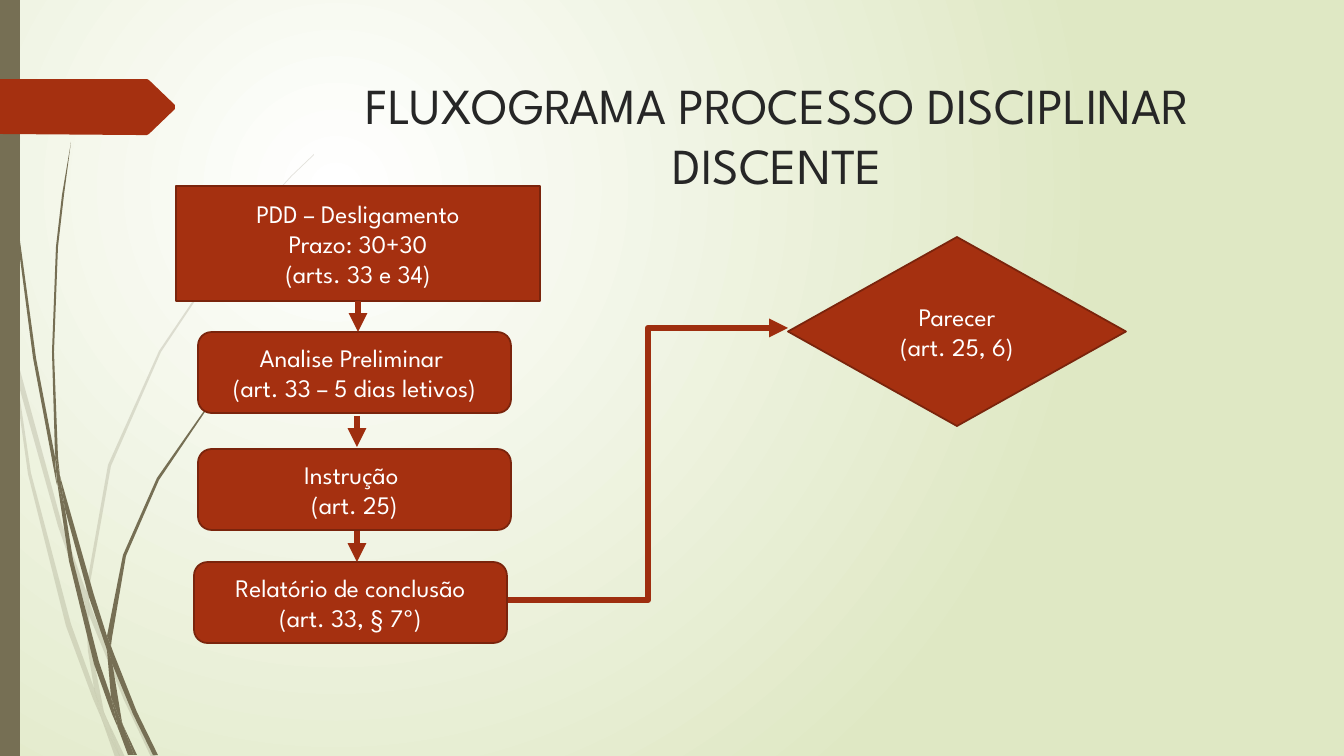
from lxml import etree
from pptx import Presentation
from pptx.dml.color import RGBColor
from pptx.enum.shapes import MSO_CONNECTOR, MSO_SHAPE
from pptx.enum.text import MSO_ANCHOR, MSO_AUTO_SIZE, PP_ALIGN
from pptx.oxml import parse_xml
from pptx.oxml.ns import nsdecls, qn
from pptx.util import Pt

PX = 12192000 / 1344
SLIDE_W, SLIDE_H = 1344, 756
FONT = "League Spartan"
WHITE = RGBColor(0xFF, 0xFF, 0xFF)
PALE_GREEN = RGBColor(0xDF, 0xE8, 0xC4)
OLIVE = RGBColor(0x76, 0x6F, 0x54)
RUST = RGBColor(0xA5, 0x30, 0x10)
RUST_EDGE = RGBColor(0x7A, 0x24, 0x0C)
RUST_ARROW = RGBColor(0x9E, 0x2E, 0x0F)
INK = RGBColor(0x26, 0x26, 0x26)

CENTER = PP_ALIGN.CENTER
TOP, MIDDLE = MSO_ANCHOR.TOP, MSO_ANCHOR.MIDDLE
RECTANGLE = MSO_SHAPE.RECTANGLE
PROCESS = MSO_SHAPE.FLOWCHART_PROCESS
STEP = MSO_SHAPE.FLOWCHART_ALTERNATE_PROCESS
DECISION = MSO_SHAPE.FLOWCHART_DECISION
STRAIGHT, ELBOW = MSO_CONNECTOR.STRAIGHT, MSO_CONNECTOR.ELBOW

# Outlines of the grass blades, as corner points in px.
PALE_GRASS = [
    [(11, 353), (9, 325), (0, 284), (0, 301), (10, 347)],
    [(58, 526), (85, 604), (86, 591), (62, 524), (14, 348), (17, 379)],
    [(93, 612), (89, 601), (89, 615), (124, 700), (151, 757), (156, 757), (128, 698)],
    [(120, 757), (125, 757), (106, 717)],
    [(94, 688), (71, 624), (31, 473), (17, 379), (11, 353), (28, 474), (66, 626),
     (93, 699), (102, 720), (100, 713)],
    [(85, 604), (88, 651), (94, 688), (97, 698), (106, 717), (104, 712), (92, 651),
     (89, 615), (89, 613)],
    [(89, 589), (111, 466), (161, 352), (231, 247), (270, 200), (292, 176),
     (314, 155), (314, 154), (291, 176), (270, 199), (230, 246), (159, 351),
     (108, 465), (86, 589), (86, 591), (89, 601)],
    [(102, 720), (115, 757), (120, 757)],
    [(89, 613), (89, 615), (89, 601), (86, 591), (85, 604)],
    [(97, 698), (94, 688), (100, 713), (102, 720), (120, 757), (106, 717)],
]
DARK_GRASS = [
    [(7, 111), (17, 235), (33, 358), (56, 481), (57, 485), (55, 461), (55, 457),
     (36, 358), (19, 234), (8, 110), (5, 48), (4, 0), (3, 0), (4, 48)],
    [(89, 597), (107, 650), (107, 638), (107, 636), (94, 595), (60, 476), (65, 509)],
    [(114, 654), (111, 646), (111, 661), (133, 714), (153, 755), (158, 755), (137, 712)],
    [(111, 697), (99, 662), (73, 560), (65, 509), (57, 481), (69, 561), (94, 664),
     (112, 714), (118, 728), (117, 723)],
    [(60, 476), (58, 457), (54, 352), (58, 247), (64, 195), (71, 142), (62, 195),
     (56, 247), (52, 352), (55, 453)],
    [(134, 755), (137, 755), (123, 725)],
    [(57, 481), (65, 509), (60, 476), (55, 453), (55, 457)],
    [(112, 638), (126, 556), (159, 480), (207, 409), (233, 377), (247, 362),
     (263, 347), (262, 347), (247, 361), (233, 376), (206, 408), (157, 478),
     (123, 555), (107, 636), (111, 646)],
    [(118, 728), (128, 755), (132, 755)],
    [(107, 650), (111, 697), (117, 712), (123, 725), (122, 722), (112, 661), (110, 656)],
    [(107, 650), (110, 656), (112, 661), (111, 646), (107, 636), (107, 638)],
    [(117, 712), (111, 697), (117, 723), (118, 728), (131, 755), (134, 755), (123, 725)],
]
PAGE_TAG = [(175, 109), (149, 134), (147, 135), (137, 135), (0, 134), (0, 79),
            (147, 79), (149, 80), (175, 105)]


def emu(*lengths):
    return [round(length * PX) for length in lengths]


def paint_background(slide):
    stops = "".join(
        f'<a:gs pos="{pos}"><a:srgbClr val="{color}"/></a:gs>'
        for pos, color in ((0, WHITE), (100000, PALE_GREEN)))
    slide.element.cSld.insert(0, parse_xml(
        f'<p:bg {nsdecls("p", "a")}><p:bgPr><a:gradFill rotWithShape="1">'
        f'<a:gsLst>{stops}</a:gsLst><a:path path="circle">'
        '<a:fillToRect l="50000" t="50000" r="100000" b="100000"/></a:path>'
        '</a:gradFill><a:effectLst/></p:bgPr></p:bg>'))


def fill_plain(shape, color):
    shape.shadow.inherit = False
    shape.fill.solid()
    shape.fill.fore_color.rgb = color
    shape.line.fill.background()


def draw_outline(slide, points, color):
    start, *rest = [emu(*point) for point in points]
    builder = slide.shapes.build_freeform(*start)
    builder.add_line_segments(rest, close=True)
    outline = builder.convert_to_shape()
    fill_plain(outline, color)
    return outline


def draw_decoration(slide):
    for points in PALE_GRASS:
        blade = draw_outline(slide, points, OLIVE)
        tint = blade.element.spPr.find(f'{qn("a:solidFill")}/{qn("a:srgbClr")}')
        etree.SubElement(tint, qn("a:alpha"), val="20000")
    for points in DARK_GRASS:
        draw_outline(slide, points, OLIVE)
    side_bar = slide.shapes.add_shape(RECTANGLE, *emu(0, 0, 20, SLIDE_H))
    fill_plain(side_bar, OLIVE)
    draw_outline(slide, PAGE_TAG, RUST)


def write(frame, lines, size, color, anchor):
    frame.word_wrap = True
    frame.auto_size = MSO_AUTO_SIZE.NONE
    frame.vertical_anchor = anchor
    frame.text = "\n".join(lines)
    for paragraph in frame.paragraphs:
        paragraph.alignment = CENTER
        paragraph.font.name = FONT
        paragraph.font.size = Pt(size)
        paragraph.font.color.rgb = color


def place_title(slide, box):
    title = slide.shapes.title
    title.left, title.top, title.width, title.height = emu(*box)
    write(title.text_frame, ["FLUXOGRAMA PROCESSO DISCIPLINAR DISCENTE"], 36, INK, TOP)


def add_node(slide, kind, box, *lines):
    node = slide.shapes.add_shape(kind, *emu(*box))
    fill_plain(node, RUST)
    node.line.color.rgb = RUST_EDGE
    node.line.width = Pt(1.25)
    write(node.text_frame, lines, 18, WHITE, MIDDLE)


def add_arrow(slide, kind, start, end):
    arrow = slide.shapes.add_connector(kind, *emu(*start, *end))
    arrow.line.color.rgb = RUST_ARROW
    arrow.line.width = Pt(4.5)
    line = arrow.element.spPr.find(qn("a:ln"))
    etree.SubElement(line, qn("a:tailEnd"), type="triangle")
    etree.SubElement(arrow.element.spPr, qn("a:effectLst"))


def draw_flowchart(slide, left, top):
    step_w, step_h = 313, 81
    add_node(slide, PROCESS, (left, top, 364, 115),
             "PDD – Desligamento", "Prazo: 30+30", "(arts. 33 e 34)")
    add_node(slide, STEP, (left + 22, top + 146, step_w, step_h),
             "Analise Preliminar ", "(art. 33 – 5 dias letivos)")
    add_node(slide, STEP, (left + 22, top + 263, step_w, step_h),
             "Instrução ", "(art. 25)")
    add_node(slide, DECISION, (left + 612, top + 51, 338, 189),
             "Parecer", "(art. 25, 6)")
    add_arrow(slide, ELBOW, (left + 332, top + 414), (left + 612, top + 142))
    add_node(slide, STEP, (left + 18, top + 376, step_w, step_h),
             "Relatório de conclusão", "(art. 33, § 7º)")
    for dx, dy in ((182, 115), (181, 230), (181, 345)):
        add_arrow(slide, STRAIGHT, (left + dx, top + dy), (left + dx, top + dy + 31))


def main():
    deck = Presentation()
    deck.slide_width, deck.slide_height = emu(SLIDE_W, SLIDE_H)
    slide = deck.slides.add_slide(deck.slide_layouts.get_by_name("Title Only"))
    paint_background(slide)
    draw_decoration(slide)
    place_title(slide, (286, 69, 983, 141))
    draw_flowchart(slide, 176, 186)
    deck.save("out.pptx")


if __name__ == "__main__":
    main()
